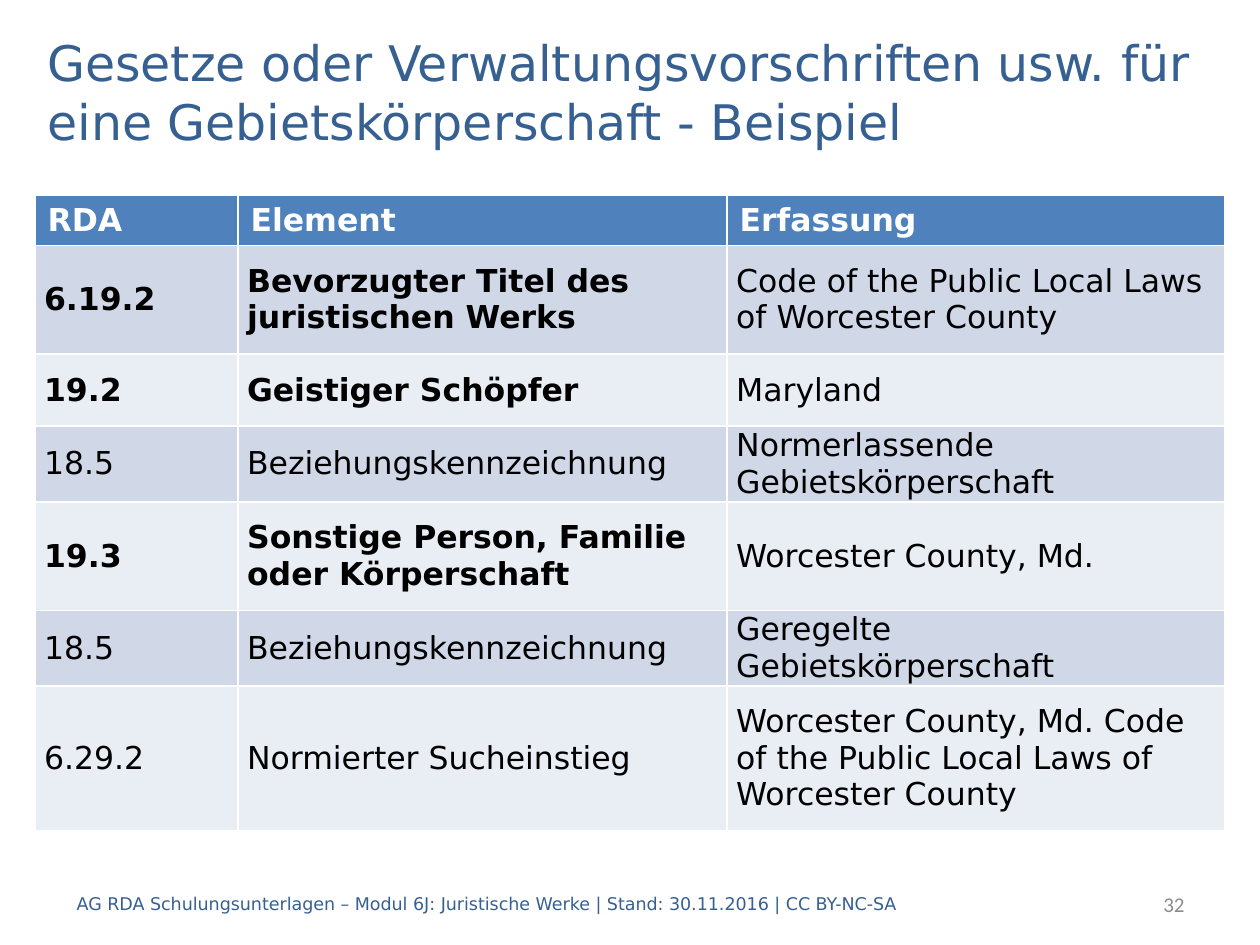
import pptx
import pptx.dml.color
import pptx.enum.text
import pptx.util

Pt = pptx.util.Pt
Align = pptx.enum.text.PP_ALIGN
MIDDLE = pptx.enum.text.MSO_ANCHOR.MIDDLE

HEADER = ["RDA", "Element", "Erfassung"]
ENTRIES = [
    ["6.19.2", "Bevorzugter Titel des juristischen Werks",
     "Code of the Public Local Laws of Worcester County"],
    ["19.2", "Geistiger Schöpfer", "Maryland"],
    ["18.5", "Beziehungskennzeichnung", "Normerlassende Gebietskörperschaft"],
    ["19.3", "Sonstige Person, Familie oder Körperschaft", "Worcester County, Md."],
    ["18.5", "Beziehungskennzeichnung", "Geregelte Gebietskörperschaft"],
    ["6.29.2", "Normierter Sucheinstieg",
     "Worcester County, Md. Code of the Public Local Laws of Worcester County"],
]
CORE_ELEMENTS = {"6.19.2", "19.2", "19.3"}
COLUMN_WIDTHS = [116, 279.5, 284.5]
ROW_HEIGHTS = [27.5, 62, 41.25, 41.25, 62, 41.25, 82.5]


def color(value):
    return pptx.dml.color.RGBColor.from_string(value)


def write(frame, text, size=18, font="DejaVu Sans", fill="000000", bold=False,
          align=Align.LEFT, space_after=0):
    frame.word_wrap = True
    paragraph = frame.paragraphs[0]
    paragraph.alignment = align
    paragraph.space_after = Pt(space_after)
    run = paragraph.add_run()
    run.text = text
    run.font.size = Pt(size)
    run.font.name = font
    run.font.bold = bold
    run.font.color.rgb = color(fill)


class SlideBuilder:
    accent = "376092"
    header_fill = "4F81BD"
    band_fills = ["D0D8E8", "E9EDF4"]

    def __init__(self, presentation):
        self.slide = presentation.slides.add_slide(presentation.slide_layouts[6])

    def text(self, text, left, top, width, height, **style):
        shape = self.slide.shapes.add_textbox(Pt(left), Pt(top), Pt(width), Pt(height))
        shape.text_frame.vertical_anchor = MIDDLE
        write(shape.text_frame, text, **style)

    def cell(self, cell, text, background, side, edge, **style):
        cell.fill.solid()
        cell.fill.fore_color.rgb = color(background)
        cell.vertical_anchor = MIDDLE
        cell.margin_left = cell.margin_right = Pt(side)
        cell.margin_top = cell.margin_bottom = Pt(edge)
        write(cell.text_frame, text, **style)

    def table(self, left, top, header, entries, widths, heights):
        table = self.slide.shapes.add_table(
            len(heights), len(widths), Pt(left), Pt(top),
            Pt(sum(widths)), Pt(sum(heights))).table
        for column, width in zip(table.columns, widths):
            column.width = Pt(width)
        for row, height in zip(table.rows, heights):
            row.height = Pt(height)
        for column, label in enumerate(header):
            self.cell(table.cell(0, column), label, self.header_fill, 7.2, 3.6,
                      fill="FFFFFF", bold=True)
        for row, entry in enumerate(entries):
            for column, value in enumerate(entry):
                self.cell(table.cell(row + 1, column), value, self.band_fills[row % 2],
                          5.2, 0, space_after=6,
                          bold=entry[0] in CORE_ELEMENTS and column < 2)


def main():
    presentation = pptx.Presentation()
    presentation.slide_width = Pt(720)
    presentation.slide_height = Pt(540)
    builder = SlideBuilder(presentation)
    builder.text("Gesetze oder Verwaltungsvorschriften usw. für eine "
                 "Gebietskörperschaft - Beispiel",
                 20, 32, 680, 40, size=28, fill=builder.accent)
    builder.table(20, 111.5, HEADER, ENTRIES, COLUMN_WIDTHS, ROW_HEIGHTS)
    builder.text("32", 569.5, 502, 114.5, 29, size=12, font="Calibri",
                 fill="8C8C8C", align=Align.RIGHT)
    builder.text("AG RDA Schulungsunterlagen – Modul 6J: Juristische Werke | "
                 "Stand: 30.11.2016 | CC BY-NC-SA",
                 36.75, 502, 510.5, 29, size=10, fill=builder.accent)
    presentation.save("out.pptx")


if __name__ == "__main__":
    main()
